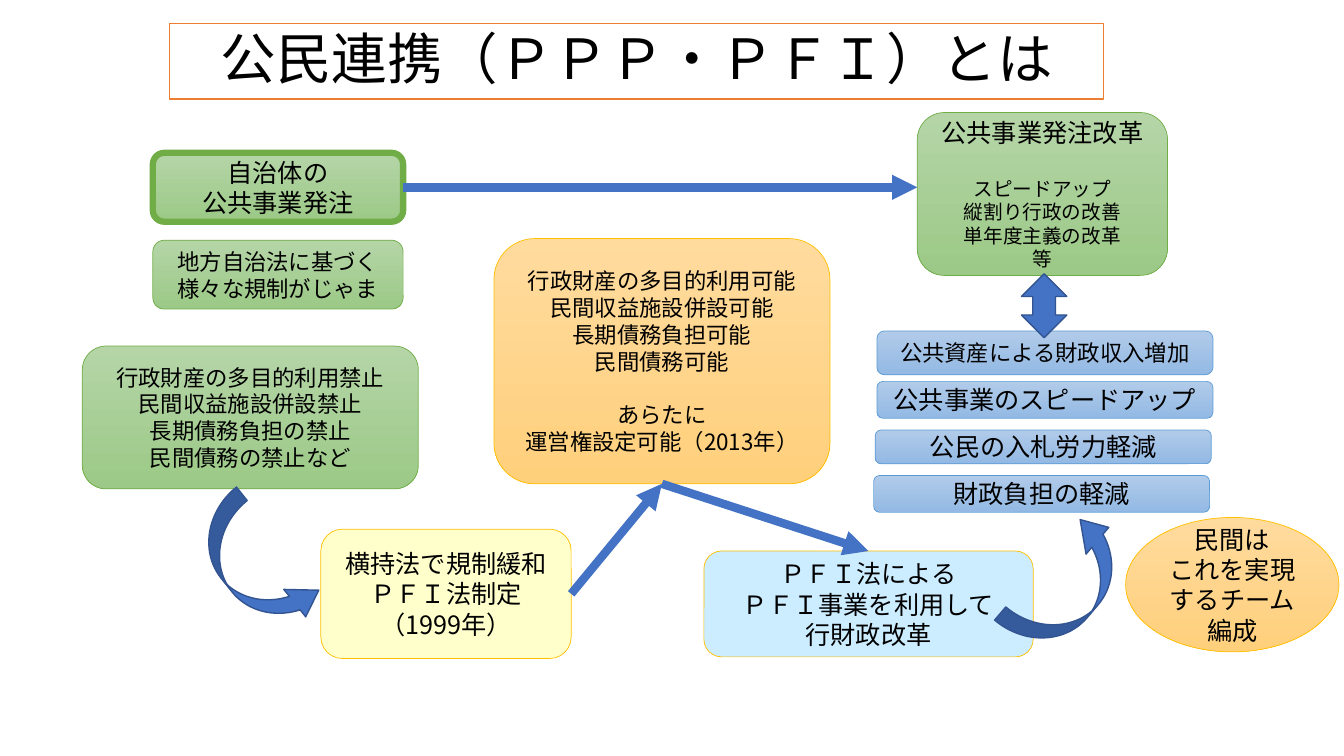
from pptx import Presentation
from pptx import util as u
from pptx.dml.color import RGBColor
from pptx.enum import shapes, text
from pptx.oxml.ns import qn
from lxml import etree

FONT = "Noto Sans CJK JP"
BLACK = RGBColor(0x00, 0x00, 0x00)
WHITE = RGBColor(0xFF, 0xFF, 0xFF)
ORANGE = RGBColor(0xED, 0x7D, 0x31)
GREEN = RGBColor(0x70, 0xAD, 0x47)
GOLD = RGBColor(0xFF, 0xC0, 0x00)
BLUE = RGBColor(0x5B, 0x9B, 0xD5)
ARROW = RGBColor(0x44, 0x72, 0xC4)
ARROW_EDGE = RGBColor(0x32, 0x54, 0x91)
CREAM = RGBColor(0xFF, 0xFF, 0xCC)
SKY = RGBColor(0xCC, 0xEC, 0xFF)
GREEN_FADE = (RGBColor(0xB5, 0xD5, 0xA7), RGBColor(0x9C, 0xC9, 0x87))
GOLD_FADE = (RGBColor(0xFF, 0xDB, 0x9E), RGBColor(0xFF, 0xD0, 0x7C))
BLUE_FADE = (RGBColor(0xB1, 0xCB, 0xE9), RGBColor(0x93, 0xB9, 0xE4))
KIND = shapes.MSO_SHAPE
TOP, LEFT, BOTTOM, RIGHT = range(4)


class Board:
    """Draws styled elements on a slide divided into 80 columns and 45 rows."""

    def __init__(self, deck):
        self.page = deck.slides.add_slide(deck.slide_layouts[6])
        self.column = deck.slide_width / 80
        self.row = deck.slide_height / 45

    def place(self, column, row):
        return round(column * self.column), round(row * self.row)

    def shape(self, kind, area, fill, edge, weight=0.5):
        box = self.page.shapes.add_shape(kind, *self.place(*area[:2]), *self.place(*area[2:]))
        box.shadow.inherit = False
        if isinstance(fill, RGBColor):
            box.fill.solid()
            box.fill.fore_color.rgb = fill
        else:
            box.fill.gradient()
            box.fill.gradient_angle = 270
            for stop, color in zip(box.fill.gradient_stops, fill):
                stop.color.rgb = color
        box.line.color.rgb = edge
        box.line.width = u.Pt(weight)
        return box

    def label(self, area, words, fill, edge, size=18, weight=0.5, kind=KIND.ROUNDED_RECTANGLE):
        box = self.shape(kind, area, fill, edge, weight)
        frame = box.text_frame
        frame.word_wrap = True
        frame.vertical_anchor = text.MSO_ANCHOR.MIDDLE
        frame.text = words
        for para in frame.paragraphs:
            para.alignment = text.PP_ALIGN.CENTER
            for span in para.runs:
                span.font.size = u.Pt(size)
                span.font.name = FONT
                span.font.color.rgb = BLACK
                east = etree.SubElement(span.font._element, qn("a:ea"))
                east.set("typeface", FONT)
        return box

    def block_arrow(self, kind, area, adjustments, rotation=0):
        box = self.shape(kind, area, ARROW, ARROW_EDGE, 1)
        box.rotation = rotation
        for index, value in enumerate(adjustments):
            box.adjustments[index] = value

    def arrow(self, start, side, end, end_side=None):
        target = (0, 0) if end_side is not None else self.place(*end)
        link = self.page.shapes.add_connector(shapes.MSO_CONNECTOR.STRAIGHT, 0, 0, *target)
        link.begin_connect(start, side)
        if end_side is not None:
            link.end_connect(end, end_side)
        link.line.color.rgb = ARROW
        link.line.width = u.Pt(6)
        etree.SubElement(link.line._get_or_add_ln(), qn("a:tailEnd")).set("type", "triangle")
        etree.SubElement(link._element.spPr, qn("a:effectLst"))


def main():
    deck = Presentation()
    deck.slide_width, deck.slide_height = u.Inches(13.33), u.Inches(7.5)
    board = Board(deck)

    title = board.label((10.1, 1.4, 55.6, 4.5), "公民連携（ＰＰＰ・ＰＦＩ）とは",
                        WHITE, ORANGE, 39.6, 1, KIND.RECTANGLE)
    title.text_frame.paragraphs[0].line_spacing = 0.9

    orders = board.label((9.1, 9.1, 14.9, 4.1), "自治体の\n公共事業発注",
                         GREEN_FADE, GREEN, weight=4.5)
    board.label((9.1, 14.3, 14.9, 4.1), "地方自治法に基づく\n様々な規制がじゃま",
                GREEN_FADE, GREEN, 16)
    board.label((4.9, 20.6, 20, 8.5),
                "行政財産の多目的利用禁止\n民間収益施設併設禁止\n長期債務負担の禁止\n民間債務の禁止など",
                GREEN_FADE, GREEN, 16)
    pfi_law = board.label((19.1, 31.5, 14.9, 7.7),
                          "横持法で規制緩和\nＰＦＩ法制定\n（1999年）", CREAM, GOLD)
    allowed = board.label((29.4, 14.2, 20, 14.6),
                          "行政財産の多目的利用可能\n民間収益施設併設可能\n長期債務負担可能\n"
                          "民間債務可能\nあらたに\n運営権設定可能（2013年）",
                          GOLD_FADE, GOLD, 16)
    allowed.text_frame.paragraphs[4].space_before = u.Pt(19)
    projects = board.label((41.9, 32.8, 19.6, 6.3),
                           "ＰＦＩ法による\nＰＦＩ事業を利用して\n行財政改革", SKY, GOLD)

    for column, row, height, words, size in (
        (52, 28.3, 2.2, "財政負担の軽減", 18),
        (52.1, 25.6, 2, "公民の入札労力軽減", 18),
        (52.2, 22.7, 2.2, "公共事業のスピードアップ", 18),
        (52.2, 19.7, 2.6, "公共資産による財政収入増加", 16),
    ):
        board.label((column, row, 20, height), words, BLUE_FADE, BLUE, size)

    reform = board.label((54.6, 6.7, 14.9, 9.7),
                         "公共事業発注改革\nスピードアップ\n縦割り行政の改善\n単年度主義の改革\n等",
                         GREEN_FADE, GREEN, 14)
    heading, first = reform.text_frame.paragraphs[:2]
    heading.runs[0].font.size = u.Pt(18)
    first.space_before = u.Pt(21)

    board.arrow(pfi_law, RIGHT, allowed, BOTTOM)
    board.arrow(allowed, BOTTOM, projects, TOP)
    board.arrow(orders, RIGHT, (54.6, 11.15))
    for column, row, rotation in ((10.8, 31.7, 51.4), (59.2, 32.8, 310.4)):
        board.block_arrow(KIND.CURVED_UP_ARROW, (column, row, 8.9, 4.1),
                          (0.25, 0.51, 0.39), rotation)
    board.block_arrow(KIND.UP_DOWN_ARROW, (60.8, 16.3, 2.7, 3.8), (0.3, 0.5))
    board.label((67, 30.8, 12.7, 8), "民間は\nこれを実現するチーム\n編成",
                GOLD_FADE, GOLD, kind=KIND.OVAL)
    deck.save("out.pptx")


if __name__ == "__main__":
    main()
